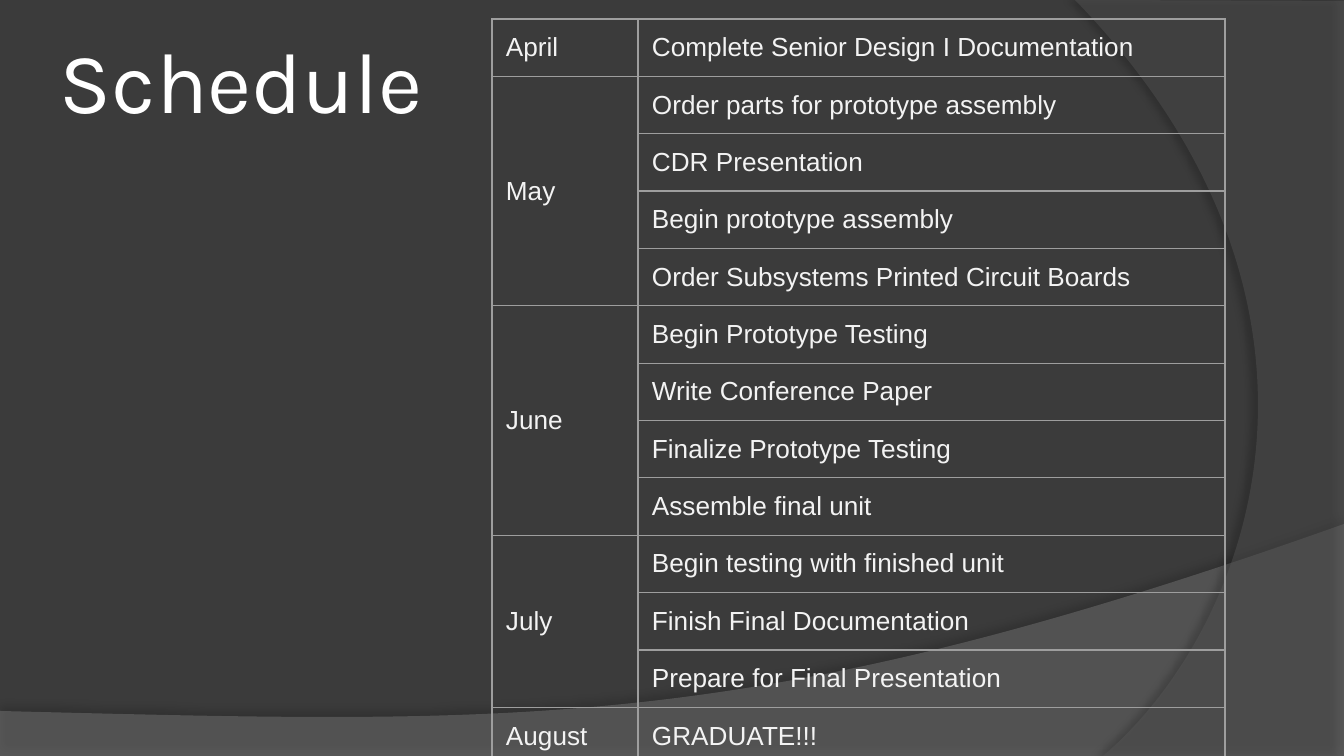
import lxml.etree
import pptx
import pptx.dml.color
import pptx.enum.text
import pptx.oxml.ns
import pptx.util

SLIDE_WIDTH, SLIDE_HEIGHT = 1344, 756
EMU_PER_PX = 914400 / 134.4
COLORS = {
    "background": "3B3B3B",
    "wave": "7B7B7B",
    "arc": "5A5A5A",
    "shadow": "000000",
    "title": "FFFFFF",
    "body": "F3F3F3",
    "border": "9E9E9E",
}
SCHEDULE = [
    ("April", ["Complete Senior Design I Documentation"]),
    ("May", ["Order parts for prototype assembly", "CDR Presentation",
             "Begin prototype assembly", "Order Subsystems Printed Circuit Boards"]),
    ("June", ["Begin Prototype Testing", "Write Conference Paper",
              "Finalize Prototype Testing", "Assemble final unit"]),
    ("July", ["Begin testing with finished unit", "Finish Final Documentation",
              "Prepare for Final Presentation"]),
    ("August", ["GRADUATE!!!"]),
]


def px(length):
    return pptx.util.Emu(round(length * EMU_PER_PX))


def rgb(name):
    return pptx.dml.color.RGBColor.from_string(COLORS[name])


def add_xml(parent, tag, **attributes):
    return lxml.etree.SubElement(parent, pptx.oxml.ns.qn(tag), attributes)


def add_color(parent, name, opacity=100):
    color = add_xml(parent, "a:srgbClr", val=COLORS[name])
    if opacity < 100:
        add_xml(color, "a:alpha", val=str(opacity * 1000))


def write(frame, text, *, font="Arial", size=14, color="body"):
    run = frame.paragraphs[0].add_run()
    run.text = text
    run.font.name = font
    run.font.size = pptx.util.Pt(size)
    run.font.color.rgb = rgb(color)


class SlideBuilder:
    inset_x, inset_y = 14, 13
    border_width = pptx.util.Pt(0.75)

    def __init__(self, slide):
        self.slide = slide
        slide.background.fill.solid()
        slide.background.fill.fore_color.rgb = rgb("background")

    def set_insets(self, owner):
        owner.margin_left = owner.margin_right = px(self.inset_x)
        owner.margin_top = owner.margin_bottom = px(self.inset_y)

    def swoosh(self, corners, controls, color, opacity, shadow):
        """Draw a translucent outline whose last edge is a cubic curve."""
        builder = self.slide.shapes.build_freeform(*corners[0], scale=EMU_PER_PX)
        builder.add_line_segments(corners[1:], close=True)
        outline = builder.convert_to_shape()
        properties = outline.element.spPr

        last_edge = properties.findall(".//" + pptx.oxml.ns.qn("a:lnTo"))[-1]
        curve = add_xml(last_edge.getparent(), "a:cubicBezTo")
        left, top = (min(axis) for axis in zip(*corners))
        for x, y in controls:
            add_xml(curve, "a:pt", x=str(x - left), y=str(y - top))
        curve.append(last_edge[0])
        last_edge.getparent().replace(last_edge, curve)

        outline.line.fill.background()
        outline.fill.solid()
        outline.fill.fore_color.rgb = rgb(color)
        fill_color = properties.find(pptx.oxml.ns.qn("a:solidFill"))[0]
        add_xml(fill_color, "a:alpha", val=str(opacity * 1000))

        outline.shadow.inherit = False
        shadow_opacity, distance, angle = shadow
        effects = properties.find(pptx.oxml.ns.qn("a:effectLst"))
        cast = add_xml(effects, "a:outerShdw", blurRad=str(pptx.util.Pt(4)),
                       dist=str(pptx.util.Pt(distance)),
                       dir=str(angle * 60000), algn="bl", rotWithShape="0")
        add_color(cast, "shadow", shadow_opacity)

    def title(self, text, left, top, width, height):
        frame = self.slide.shapes.add_textbox(*map(px, (left, top, width, height))).text_frame
        frame.word_wrap = True
        self.set_insets(frame)
        write(frame, text, font="Karla", size=46, color="title")

    def cell(self, cell, text=""):
        self.set_insets(cell)
        cell.vertical_anchor = pptx.enum.text.MSO_ANCHOR.MIDDLE
        cell.fill.background()
        properties = cell._tc.get_or_add_tcPr()
        for position, edge in enumerate(("a:lnL", "a:lnR", "a:lnT", "a:lnB")):
            border = add_xml(properties, edge, w=str(self.border_width))
            add_color(add_xml(border, "a:solidFill"), "border")
            properties.insert(position, border)
        if text:
            write(cell.text_frame, text)

    def schedule(self, months, left, top, column_widths, row_height):
        row_count = sum(len(tasks) for _, tasks in months)
        table = self.slide.shapes.add_table(
            row_count, len(column_widths), px(left), px(top),
            px(sum(column_widths)), px(row_height * row_count)).table
        table.first_row = table.horz_banding = False
        for column, width in zip(table.columns, column_widths):
            column.width = px(width)
        row = 0
        for month, tasks in months:
            for offset, task in enumerate(tasks):
                self.cell(table.cell(row + offset, 0), "" if offset else month)
                self.cell(table.cell(row + offset, 1), task)
            last_row = row + len(tasks) - 1
            if last_row > row:
                table.cell(row, 0).merge(table.cell(last_row, 0))
            row = last_row + 1


def main():
    deck = pptx.Presentation()
    deck.slide_width, deck.slide_height = px(SLIDE_WIDTH), px(SLIDE_HEIGHT)
    page = SlideBuilder(deck.slides.add_slide(deck.slide_layouts[6]))

    wave = [(0, 711), (0, SLIDE_HEIGHT), (SLIDE_WIDTH, SLIDE_HEIGHT),
            (SLIDE_WIDTH, 524), (0, 711)]
    page.swoosh(wave, [(751, 735), (526, 724)], "wave", 45, shadow=(35, 3.5, 270))

    arc = [(SLIDE_WIDTH, 1), (SLIDE_WIDTH, SLIDE_HEIGHT), (1103, SLIDE_HEIGHT), (1075, 0)]
    page.swoosh(arc, [(1257, 624), (1368, 302)], "arc", 40, shadow=(45, 4, 180))

    page.title("Schedule", 46, 15, 1253, 85)
    page.schedule(SCHEDULE, 492, 19, (146, 587), 51)
    deck.save("out.pptx")


if __name__ == "__main__":
    main()
